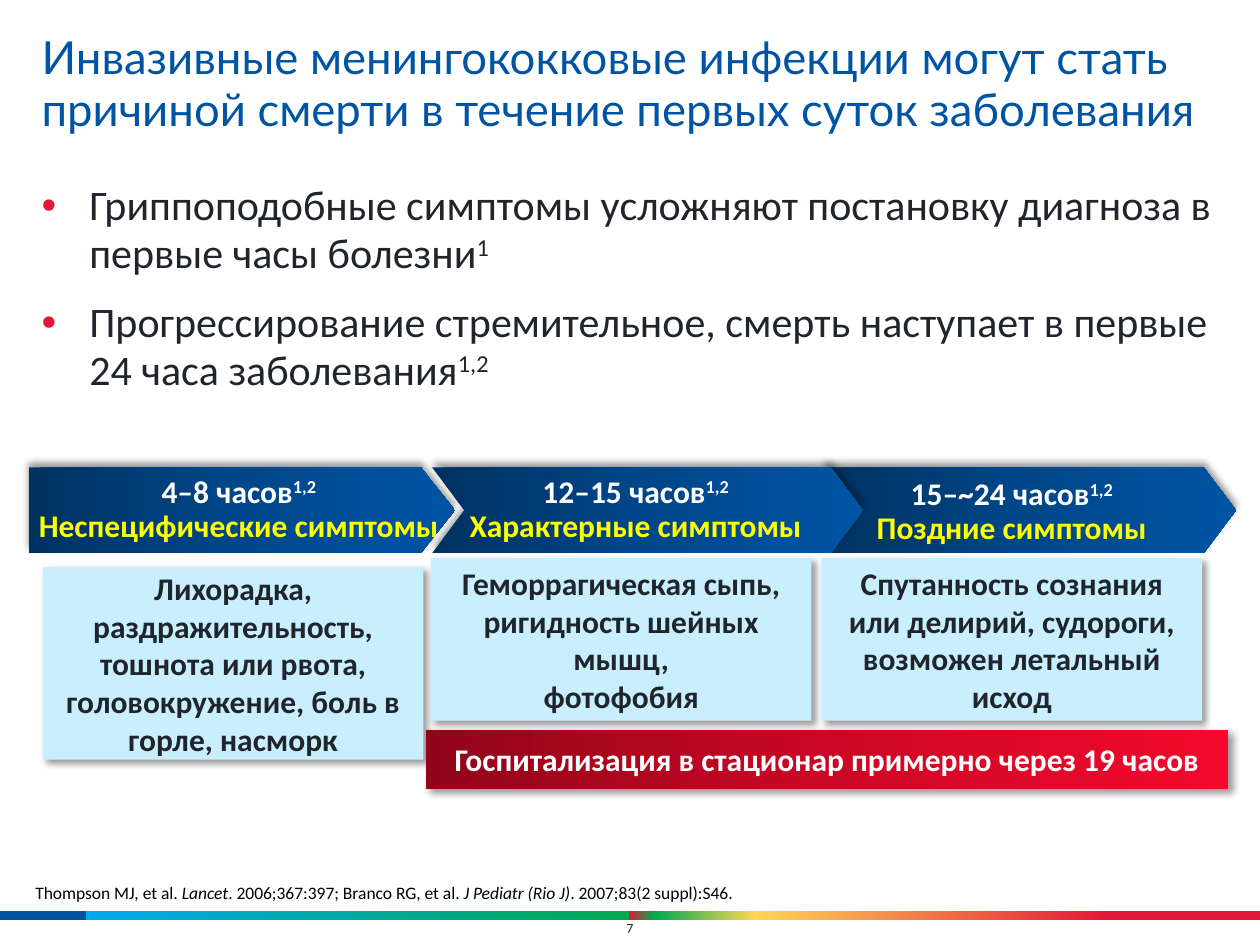
from lxml import etree
from pptx import Presentation
from pptx.dml.color import RGBColor
from pptx.enum.shapes import MSO_SHAPE
from pptx.enum.text import MSO_ANCHOR, PP_ALIGN
from pptx.oxml import parse_xml
from pptx.oxml.ns import nsdecls, qn
from pptx.util import Inches, Pt

RECT, CHEVRON, ARROW = MSO_SHAPE.RECTANGLE, MSO_SHAPE.CHEVRON, MSO_SHAPE.RIGHT_ARROW
LEFT, CENTER = PP_ALIGN.LEFT, PP_ALIGN.CENTER
TOP, MIDDLE, BOTTOM = MSO_ANCHOR.TOP, MSO_ANCHOR.MIDDLE, MSO_ANCHOR.BOTTOM

BLUE, DARK, RED = "0054A4", "20252C", "E31837"
WHITE, YELLOW, PALE, BLACK = "FFFFFF", "FFFF00", "C9EFFF", "000000"
STAGE_STOPS = [(0, "003261"), (50, "00478A"), (100, BLUE)]
ALERT_STOPS = [(0, "90051A"), (50, "CC0725"), (100, "F2092C")]
BAR_STOPS = [(7, BLUE), (7, "00A9EF"), (50, "00A94F"), (50, RED),
             (52, "00A94F"), (60, "FFD457"), (88, RED)]
SUP, ITALIC, ACCENT = {"sup": True}, {"italic": True}, {"color": YELLOW}


def rgb(value):
    return RGBColor.from_string(value)


def set_gradient(sp, stops):
    """Fill a shape with a left-to-right gradient."""
    sp.fill.gradient()
    sp.fill.gradient_angle = 0
    gs_list = sp._element.spPr.find(qn("a:gradFill")).find(qn("a:gsLst"))
    for old in list(gs_list):
        gs_list.remove(old)
    for pos, color in stops:
        gs = etree.SubElement(gs_list, qn("a:gs"), pos=str(pos * 1000))
        etree.SubElement(gs, qn("a:srgbClr"), val=color)


def set_shadow(sp, angle):
    effects = sp._element.spPr.find(qn("a:effectLst"))
    effects.append(parse_xml(
        f'<a:outerShdw {nsdecls("a")} blurRad="{Pt(4)}" dist="{Pt(3)}" '
        f'dir="{angle * 60000}" algn="tl" rotWithShape="0"><a:srgbClr val="{BLACK}">'
        '<a:alpha val="40000"/></a:srgbClr></a:outerShdw>'))


def set_bullet(p):
    pPr = p._p.get_or_add_pPr()
    pPr.set("marL", str(Inches(0.38)))
    pPr.set("indent", str(-Inches(0.38)))
    color = etree.SubElement(pPr, qn("a:buClr"))
    etree.SubElement(color, qn("a:srgbClr"), val=RED)
    etree.SubElement(pPr, qn("a:buFont"), typeface="Arial")
    etree.SubElement(pPr, qn("a:buChar"), char="•")


def format_run(r, size, color, font="Calibri", bold=False, italic=False, sup=False):
    r.font.size, r.font.name = Pt(size), font
    r.font.bold, r.font.italic = bold, italic
    r.font.color.rgb = rgb(color)
    if sup:
        r._r.get_or_add_rPr().set("baseline", "30000")


def set_text(sp, paragraphs, align=LEFT, anchor=TOP, inset=True, spacing=None,
             before=0, bullets=False, **style):
    """Write paragraphs, each a list of (text, style changes) pairs."""
    tf = sp.text_frame
    tf.word_wrap, tf.vertical_anchor = True, anchor
    if not inset:
        tf.margin_left = tf.margin_right = tf.margin_top = tf.margin_bottom = 0
    for i, runs in enumerate(paragraphs):
        p = tf.add_paragraph() if i else tf.paragraphs[0]
        if bullets:
            set_bullet(p)
        p.alignment = align
        if spacing:
            p.line_spacing = spacing
        if i and before:
            p.space_before = Pt(before)
        for text, changes in runs:
            r = p.add_run()
            r.text = text
            format_run(r, **{**style, **changes})


def add_text(slide, box, paragraphs, **options):
    sp = slide.shapes.add_textbox(*map(Inches, box))
    set_text(sp, paragraphs, **options)


def add_block(slide, kind, box, fill, shadow=None, adjustments=()):
    """Add an outline-free shape; fill is a colour or a list of gradient stops."""
    sp = slide.shapes.add_shape(kind, *map(Inches, box))
    sp.shadow.inherit = False
    sp.line.fill.background()
    for i, value in enumerate(adjustments):
        sp.adjustments[i] = value
    if isinstance(fill, str):
        sp.fill.solid()
        sp.fill.fore_color.rgb = rgb(fill)
    else:
        set_gradient(sp, fill)
    if shadow is not None:
        set_shadow(sp, shadow)
    return sp


def add_card(slide, box, lines, fill, color):
    sp = add_block(slide, RECT, box, fill, shadow=45)
    sp.text_frame.text = "\v".join(lines)
    sp.text_frame.word_wrap = True
    sp.text_frame.vertical_anchor = MIDDLE
    p = sp.text_frame.paragraphs[0]
    p.alignment = CENTER
    for r in p.runs:
        format_run(r, 18, color, bold=True)


def add_stage_label(slide, box, hours, symptoms):
    add_text(slide, box, [[(hours, {}), ("1,2", SUP)], [(symptoms, ACCENT)]],
             align=CENTER, spacing=0.9, size=18, color=WHITE, bold=True)


def main():
    prs = Presentation()
    prs.slide_width, prs.slide_height = Inches(10), Inches(7.5)
    slide = prs.slides.add_slide(prs.slide_layouts[6])

    # Footer: page number and colour bar
    add_text(slide, (4.9, 7.3, 0.2, 0.13), [[("7", {})]], align=CENTER,
             anchor=BOTTOM, inset=False, size=8, color=DARK)
    add_block(slide, RECT, (-0.02, 7.23, 10.02, 0.07), BAR_STOPS)

    # Title, key points and references
    add_text(slide, (0.33, 0.11, 9.53, 1.13),
             [[("Инвазивные менингококковые инфекции могут стать причиной смерти "
                "в течение первых суток заболевания", {})]],
             anchor=MIDDLE, inset=False, spacing=0.95, size=26, color=BLUE, font="Lato")
    add_text(slide, (0.33, 1.45, 9.53, 3.18),
             [[("Гриппоподобные симптомы усложняют постановку диагноза "
                "в первые часы болезни", {}), ("1", SUP)],
              [("Прогрессирование стремительное, смерть наступает "
                "в первые 24 часа заболевания", {}), ("1,2", SUP)]],
             inset=False, spacing=0.95, before=12, bullets=True, size=24, color=DARK)
    add_text(slide, (0.28, 6.87, 9.52, 0.3),
             [[("Thompson MJ, et al. ", {}), ("Lancet", ITALIC),
               (". 2006;367:397; Branco RG, et al. ", {}),
               ("J Pediatr (Rio J)", ITALIC), (". 2007;83(2 suppl):S46.", {})]],
             anchor=BOTTOM, inset=False, size=10, color=BLACK)

    # Timeline arrows, the middle one on top
    for kind, left, width, adjustments in [(CHEVRON, 6.53, 3.28, [0.377]),
                                           (ARROW, 0.23, 3.38, [1, 0.397]),
                                           (CHEVRON, 3.43, 3.42, [0.377])]:
        add_block(slide, kind, (left, 3.71, width, 0.68), STAGE_STOPS, 270, adjustments)

    # Stage labels
    add_stage_label(slide, (0.17, 3.73, 3.45, 0.65), "4–8 часов", "Неспецифические симптомы")
    add_stage_label(slide, (3.47, 3.73, 3.15, 0.64), "12–15 часов", "Характерные симптомы")
    add_stage_label(slide, (6.6, 3.75, 2.86, 0.64), "15–~24 часов", "Поздние симптомы")

    # Symptom cards and hospitalisation banner
    add_card(slide, (0.34, 4.5, 3.02, 1.53),
             ["Лихорадка, раздражительность, тошнота или рвота, "
              "головокружение, боль в горле, насморк"], PALE, DARK)
    add_card(slide, (3.42, 4.43, 3.02, 1.29),
             ["Геморрагическая сыпь,", "ригидность шейных мышц,", "фотофобия"], PALE, DARK)
    add_card(slide, (6.52, 4.43, 3.02, 1.29),
             ["Спутанность сознания или делирий, судороги, возможен летальный исход"],
             PALE, DARK)
    add_card(slide, (3.38, 5.79, 6.37, 0.47),
             ["Госпитализация в стационар примерно через 19 часов"], ALERT_STOPS, WHITE)

    prs.save("out.pptx")


if __name__ == "__main__":
    main()
